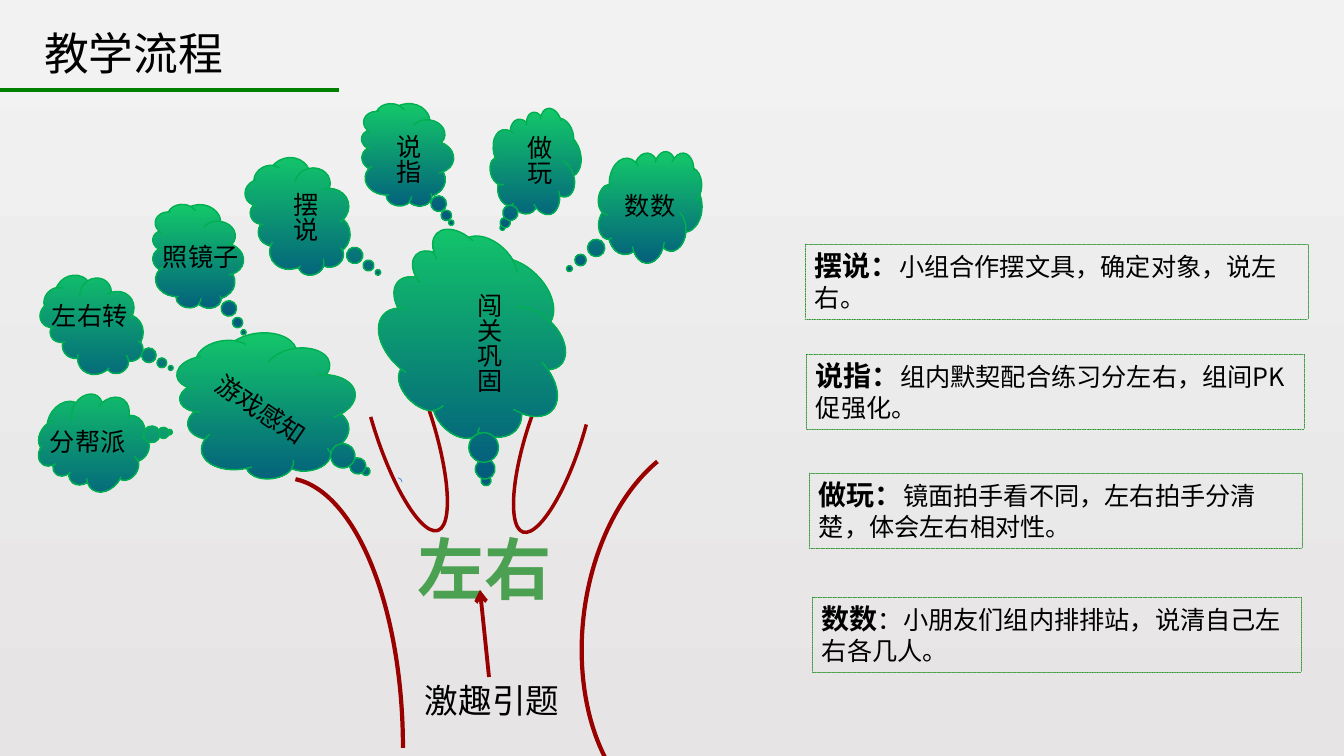
import pptx
import pptx.util
import pptx.dml.color
import pptx.enum.dml
import pptx.enum.shapes
import pptx.enum.text
from lxml import etree
import pptx.oxml.ns

PX = 914400 / 100.8
KIND = pptx.enum.shapes.MSO_SHAPE
FONT, TITLE_FONT = "Arial", "Noto Sans CJK SC"
BLACK, RED, GREEN, LEAF_EDGE, ROOT = "000000", "990000", "008000", "00B050", "4BA151"
BACKDROP = ("F2F2F2", "E6E4E4")
LEAF = ("14CD68", "035C7D")

TITLE = ("教学流程", (34, 21, 234, 64))
ARCS = [
    ((166, 478, 237, 540), 0, (163.4, 0), RED, 3),
    ((583, 435, 250, 388), 187, (180.93, 39.72), RED, 3),
    ((394, 478, 8, 8), 0, (162, 0), "477DEA", 0.5),
    ((374, 311, 58, 225), 162, (94.41, 17.7), RED, 2.5),
    ((527, 333, 55, 204), 198, (86.15, 17.7), RED, 2.5),
]
CLOUDS = [
    ((195, 318, 146, 175), 263, (-0.53, 0.51)),
    ((387, 237, 178, 206), 314, (-0.53, 0.51)),
    ((43, 391, 104, 100), 216, (-0.53, 0.51)),
    ((40, 280, 110, 88), 237, (-0.71, 0.45)),
    ((145, 210, 104, 93), 278, (-0.66, 0.61)),
    ((241, 167, 120, 98), 255, (-0.62, 0.61)),
    ((355, 108, 103, 94), 277, (-0.6, 0.56)),
    ((490, 113, 92, 103), 345, (-0.53, 0.51)),
    ((598, 150, 104, 113), 5, (-0.72, 0.61)),
]
LABELS = [
    ("游戏感知", (201, 389, 121, 40), dict(wrap=False, turn=34)),
    ("闯关巩固", (459, 283, 50, 111), dict(wrap=False, vertical=True)),
    ("分帮派", (40, 421, 119, 40), {}),
    ("左右转", (42, 295, 98, 40), {}),
    ("照镜子", (153, 236, 104, 40), {}),
    ("摆说", (275, 182, 50, 60), dict(wrap=False, vertical=True)),
    ("说指", (378, 124, 50, 60), dict(wrap=False, vertical=True)),
    ("做玩", (509, 125, 50, 60), dict(wrap=False, vertical=True)),
    ("数数", (615, 185, 71, 40), dict(wrap=False)),
    ("左右", (387, 522, 195, 90), dict(size=48, color=ROOT, bold=True, center=True)),
    ("激趣引题", (415, 675, 164, 50), dict(size=24)),
]
NOTES = [
    ("摆说：", "小组合作摆文具，确定对象，说左右。", (805, 244, 503, 75), FONT),
    ("说指：", "组内默契配合练习分左右，组间PK促强化。", (806, 354, 498, 75), TITLE_FONT),
    ("做玩：", "镜面拍手看不同，左右拍手分清楚，体会左右相对性。", (809, 473, 493, 75), FONT),
    ("数数", "：小朋友们组内排排站，说清自己左右各几人。", (812, 597, 489, 75), TITLE_FONT),
]


def emu(*lengths):
    return [pptx.util.Emu(round(length * PX)) for length in lengths]


def rgb(color):
    return pptx.dml.color.RGBColor.from_string(color)


def set_gradient(fill, colors):
    fill.gradient()
    fill.gradient_angle = 270
    for position, (stop, color) in enumerate(zip(fill.gradient_stops, colors)):
        stop.position = position
        stop.color.rgb = rgb(color)


def set_line(line, color, width):
    line.fill.solid()
    line.fill.fore_color.rgb = rgb(color)
    line.width = pptx.util.Pt(width)


def set_font(font, size, color=BLACK, bold=False, name=FONT):
    font.name = name
    font.size = pptx.util.Pt(size)
    font.bold = bold
    font.color.rgb = rgb(color)


def add_shape(kind, place, turn, adjustments, color, width):
    shape = page.shapes.add_shape(kind, *emu(*place))
    shape.shadow.inherit = False
    shape.rotation = turn
    for index, value in enumerate(adjustments):
        shape.adjustments[index] = value
    shape.fill.background()
    set_line(shape.line, color, width)
    return shape


def add_cloud(place, turn, adjustments):
    cloud = add_shape(KIND.CLOUD_CALLOUT, place, turn, adjustments, LEAF_EDGE, 1)
    set_gradient(cloud.fill, LEAF)
    gradient = cloud._element.spPr.find(pptx.oxml.ns.qn("a:gradFill"))
    gradient.set("rotWithShape", "0")


def add_label(text, place, wrap=True, turn=0, vertical=False, size=18,
              color=BLACK, bold=False, center=False):
    box = page.shapes.add_textbox(*emu(*place))
    box.rotation = turn
    frame = box.text_frame
    frame.word_wrap = wrap
    frame.auto_size = pptx.enum.text.MSO_AUTO_SIZE.SHAPE_TO_FIT_TEXT
    if vertical:
        frame._txBody.bodyPr.set("vert", "eaVert")
    para = frame.paragraphs[0]
    para.text = text
    if center:
        para.alignment = pptx.enum.text.PP_ALIGN.CENTER
    set_font(para.font, size, color, bold)


def add_note(heading, detail, place, heading_font):
    box = add_shape(KIND.RECTANGLE, place, 0, (), GREEN, 0.25)
    box.line.dash_style = pptx.enum.dml.MSO_LINE.ROUND_DOT
    box.line._get_or_add_ln().set("cap", "rnd")
    frame = box.text_frame
    frame.word_wrap = True
    frame.vertical_anchor = pptx.enum.text.MSO_ANCHOR.TOP
    para = frame.paragraphs[0]
    para.alignment = pptx.enum.text.PP_ALIGN.LEFT
    para._p.get_or_add_pPr().set("hangingPunct", "0")
    for text, size, bold in ((heading, 20, True), (detail, 18, False)):
        span = para.add_run()
        span.text = text
        set_font(span.font, size, bold=bold, name=heading_font)


def add_line(ends, color):
    line = page.shapes.add_connector(pptx.enum.shapes.MSO_CONNECTOR.STRAIGHT, *emu(*ends))
    set_line(line.line, color, 2.75)
    etree.SubElement(line._element.spPr, pptx.oxml.ns.qn("a:effectLst"))
    return line


deck = pptx.Presentation()
deck.slide_width, deck.slide_height = emu(1344, 756)
page = deck.slides.add_slide(deck.slide_layouts[5])
set_gradient(page.background.fill, BACKDROP)

title = page.shapes.title
title.left, title.top, title.width, title.height = emu(*TITLE[1])
title.text_frame.text = TITLE[0]
title.text_frame.vertical_anchor = pptx.enum.text.MSO_ANCHOR.TOP
title.text_frame.auto_size = pptx.enum.text.MSO_AUTO_SIZE.SHAPE_TO_FIT_TEXT
title_para = title.text_frame.paragraphs[0]
title_para.alignment = pptx.enum.text.PP_ALIGN.LEFT
set_font(title_para.font, 32, name=TITLE_FONT)

for arc in ARCS:
    add_shape(KIND.ARC, *arc)
for cloud in CLOUDS:
    add_cloud(*cloud)
for text, place, style in LABELS:
    add_label(text, place, **style)
for note in NOTES:
    add_note(*note)

add_line((0, 90, 339, 90), GREEN)
arrow = add_line((489, 677, 480, 590), RED)
etree.SubElement(arrow.line._get_or_add_ln(), pptx.oxml.ns.qn("a:tailEnd"), type="arrow")

deck.save("out.pptx")
